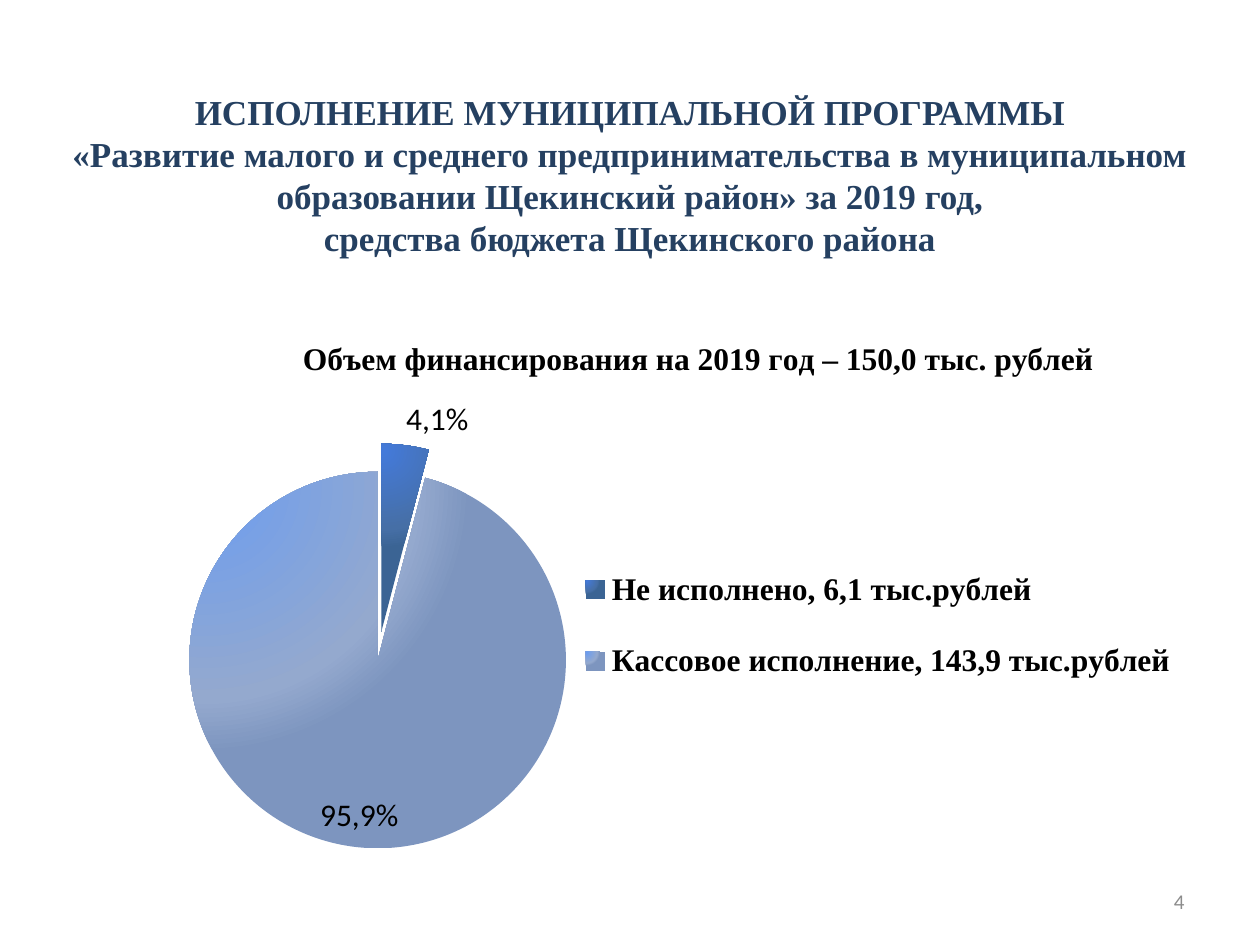
from lxml import etree
from pptx import Presentation
from pptx.chart.data import CategoryChartData
from pptx.dml.color import RGBColor
from pptx.enum.chart import XL_CHART_TYPE, XL_LABEL_POSITION, XL_LEGEND_POSITION
from pptx.enum.text import MSO_ANCHOR, PP_ALIGN
from pptx.oxml import parse_xml
from pptx.oxml.ns import nsdecls, qn
from pptx.util import Inches, Pt

NAVY = RGBColor(0x25, 0x40, 0x61)
BLACK = RGBColor(0, 0, 0)
GREY = RGBColor(0x8C, 0x8C, 0x8C)
SERIF, SANS = "Times New Roman", "Calibri"
PIE = XL_CHART_TYPE.PIE
RIGHT_LEGEND = XL_LEGEND_POSITION.RIGHT
OUTSIDE, INSIDE = XL_LABEL_POSITION.OUTSIDE_END, XL_LABEL_POSITION.INSIDE_END
CENTER, RIGHT, MIDDLE = PP_ALIGN.CENTER, PP_ALIGN.RIGHT, MSO_ANCHOR.MIDDLE

TITLE_STYLE = {"name": SERIF, "size": Pt(20), "bold": True}
NUMBER_STYLE = {"name": SANS, "size": Pt(12), "bold": False}
CHART_STYLE = {"name": SANS, "size": Pt(18), "bold": False}
HEADING_STYLE = {"name": SERIF, "size": Pt(18), "bold": True}

# Category, value, label, label position, label shift, gradient stops (percent, colour)
SLICES = [
    ("Не исполнено, 6,1 тыс.рублей", 6.1, "4,1%", OUTSIDE, (0, 0),
     [(0, "447ADA"), (80, "466FA6"), (100, "3B6494")]),
    ("Кассовое исполнение, 143,9 тыс.рублей", 143.9, "95,9%", INSIDE, (-0.03, -0.01),
     [(0, "6C9DF0"), (80, "94A9CE"), (100, "7D95BF")]),
]


def apply_font(font, style, color):
    for name, value in style.items():
        setattr(font, name, value)
    font.color.rgb = color


def set_layout(element, before, **place):
    """Place a chart part by fractions of the chart area."""
    for old in element.findall(qn("c:layout")):
        element.remove(old)
    layout = parse_xml(f"<c:layout {nsdecls('c')}><c:manualLayout/></c:layout>")
    for tag, value in place.items():
        etree.SubElement(layout[0], qn(f"c:{tag}")).set("val", str(value))
    element.find(qn(before)).addprevious(layout)


def corner_gradient(point, stops):
    """Fill a pie slice with a round gradient from near its top left corner."""
    point.format.fill.solid()
    solid = point.format.fill._xPr.find(qn("a:solidFill"))
    marks = "".join(f'<a:gs pos="{percent * 1000}"><a:srgbClr val="{color}"/></a:gs>'
                    for percent, color in stops)
    solid.getparent().replace(solid, parse_xml(
        f'<a:gradFill {nsdecls("a")} rotWithShape="1"><a:gsLst>{marks}</a:gsLst>'
        '<a:path path="circle"><a:fillToRect l="4000" t="4000" r="96000" b="96000"/>'
        '</a:path></a:gradFill>'))


class Page:
    def __init__(self, deck):
        self.slide = deck.slides.add_slide(deck.slide_layouts[6])

    def text(self, place, lines, style, color, align):
        box = self.slide.shapes.add_textbox(*map(Inches, place))
        frame = box.text_frame
        frame.word_wrap = True
        frame.vertical_anchor = MIDDLE
        para = frame.paragraphs[0]
        para.alignment = align
        for index, line in enumerate(lines):
            if index:
                para.add_line_break()
            span = para.add_run()
            span.text = line
            apply_font(span.font, style, color)

    def pie(self, place, heading, slices):
        data = CategoryChartData(number_format="0.0")
        data.categories = [item[0] for item in slices]
        data.add_series("Series 1", [item[1] for item in slices])
        chart = self.slide.shapes.add_chart(PIE, *map(Inches, place), data).chart
        apply_font(chart.font, CHART_STYLE, BLACK)

        chart.has_title = True
        span = chart.chart_title.text_frame.paragraphs[0].add_run()
        span.text = heading
        apply_font(span.font, HEADING_STYLE, BLACK)
        set_layout(chart.chart_title._element, "c:overlay",
                   xMode="edge", yMode="edge", x=0.22, y=-0.01)

        chart.has_legend = True
        legend = chart.legend
        legend.position = RIGHT_LEGEND
        legend.include_in_layout = False
        apply_font(legend.font, HEADING_STYLE, BLACK)
        set_layout(legend._element, "c:overlay",
                   xMode="edge", yMode="edge", x=0.46, y=0.38, w=0.53, h=0.34)

        plot = chart.plots[0]
        plot.vary_by_categories = True
        set_layout(plot._element.getparent(), "c:pieChart", layoutTarget="inner",
                   xMode="edge", yMode="edge", x=0.01, y=0.26, w=0.56, h=0.71)
        series = plot.series[0]
        labels = series.data_labels
        labels.show_value = True
        labels.number_format = "0.0"
        labels.number_format_is_linked = False
        for index, (_, _, caption, position, shift, stops) in enumerate(slices):
            point = series.points[index]
            corner_gradient(point, stops)
            label = point.data_label
            span = label.text_frame.paragraphs[0].add_run()
            span.text = caption
            apply_font(span.font, CHART_STYLE, BLACK)
            label.position = position
            if any(shift):
                set_layout(labels._element.findall(qn("c:dLbl"))[index], "c:tx",
                           x=shift[0], y=shift[1])
        first = series._element.find(qn("c:dPt"))
        first.find(qn("c:spPr")).addprevious(
            parse_xml(f'<c:explosion {nsdecls("c")} val="15"/>'))


def main():
    deck = Presentation()
    deck.slide_width, deck.slide_height = Inches(10), Inches(7.5)
    page = Page(deck)
    page.text((0.12, 0.6, 9.76, 1.57), [
        "ИСПОЛНЕНИЕ МУНИЦИПАЛЬНОЙ ПРОГРАММЫ",
        "«Развитие малого и среднего предпринимательства в муниципальном "
        "образовании Щекинский район» за 2019 год,",
        "средства бюджета Щекинского района",
    ], TITLE_STYLE, NAVY, CENTER)
    page.pie((0.35, 2.65, 9.13, 4.21),
             "Объем финансирования на 2019 год – 150,0 тыс. рублей", SLICES)
    page.text((7.17, 6.95, 2.33, 0.4), ["4"], NUMBER_STYLE, GREY, RIGHT)
    deck.save("out.pptx")


if __name__ == "__main__":
    main()
